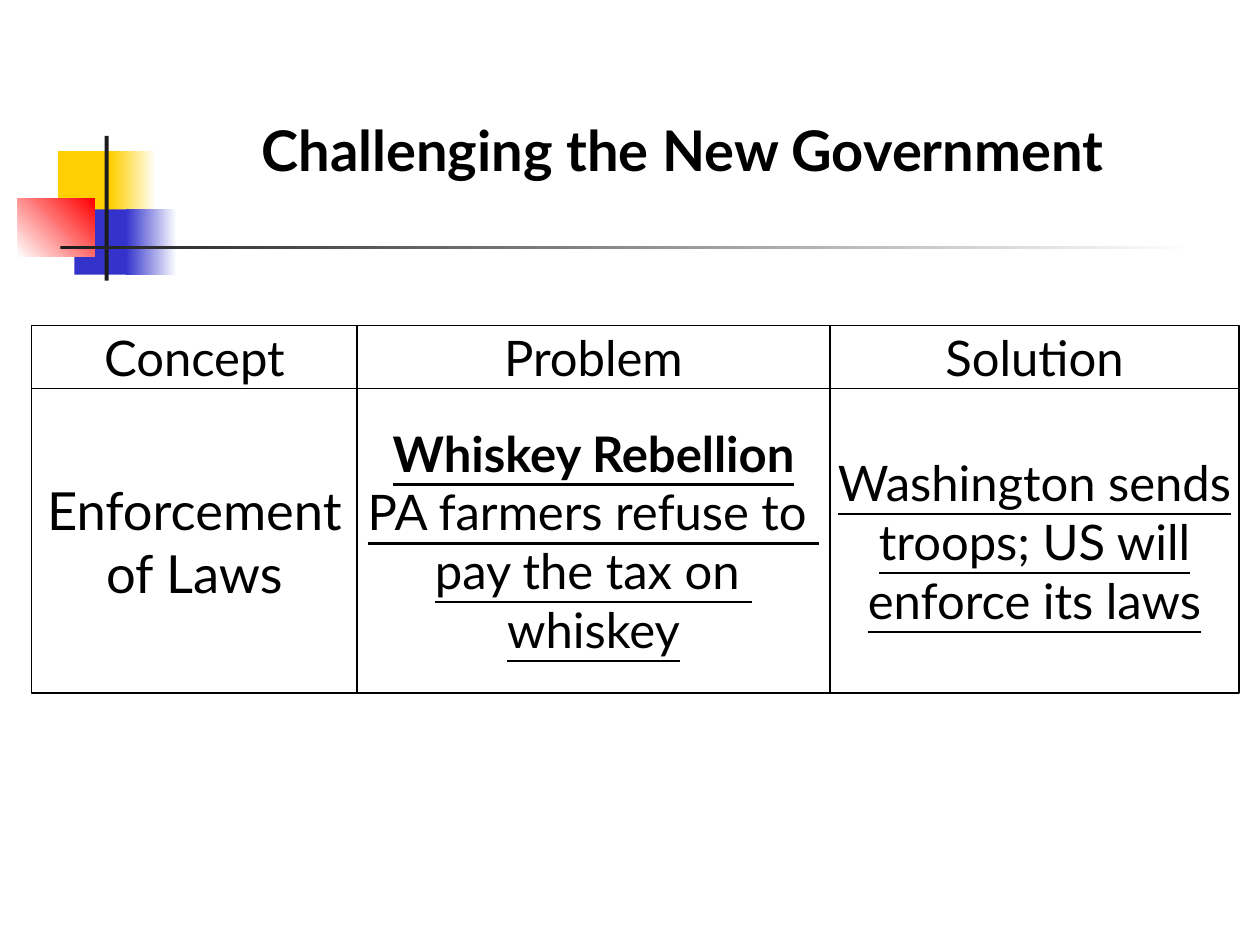
"""Build the slide on challenges to the new government."""
from typing import NamedTuple

from pptx import Presentation
from pptx.dml.color import RGBColor
from pptx.enum.shapes import MSO_SHAPE
from pptx.enum.text import MSO_ANCHOR, MSO_AUTO_SIZE, PP_ALIGN
from pptx.util import Cm, Pt

RECT = MSO_SHAPE.RECTANGLE
CENTER = PP_ALIGN.CENTER
MIDDLE, BOTTOM = MSO_ANCHOR.MIDDLE, MSO_ANCHOR.BOTTOM
NO_AUTOFIT = MSO_AUTO_SIZE.NONE
FONT = "Lato"
BLACK, WHITE, DARK = "000000", "FFFFFF", "1C1C1C"
YELLOW, BLUE, RED = "FFCF01", "3333CC", "FF0000"


class Block(NamedTuple):
    left: float
    top: float
    width: float
    height: float
    start: str
    end: str = ""
    angle: float = 0


class Para(NamedTuple):
    lines: list[str]
    size: float = 28
    bold: bool = False
    underline: bool = False


class Column(NamedTuple):
    width: float
    heading: str
    body: list[Para]


BLOCKS = [
    Block(1.17, 3.05, 1.22, 1.32, YELLOW),
    Block(2.24, 3.05, 0.91, 1.32, YELLOW, WHITE),
    Block(1.5, 4.22, 1.17, 1.32, BLUE),
    Block(2.54, 4.22, 1.02, 1.32, BLUE, WHITE),
    Block(0.36, 4.01, 1.55, 1.17, WHITE, RED, 45),
    Block(2.11, 2.74, 0.08, 2.92, DARK),
    Block(1.22, 4.95, 22.86, 0.08, DARK, WHITE),
]
COLUMNS = [
    Column(6.56, "Concept", [Para(["Enforcement"], 30), Para(["of Laws"], 30)]),
    Column(9.53, "Problem", [
        Para(["Whiskey Rebellion"], bold=True, underline=True),
        Para(["PA farmers refuse to ", "pay the tax on ", "whiskey"], underline=True),
    ]),
    Column(8.25, "Solution", [
        Para(["Washington sends", "troops; US will", "enforce its laws"], underline=True),
    ]),
]
GRID_LEFT, GRID_TOP = 0.64, 6.56
HEAD_HEIGHT, BODY_HEIGHT = 1.27, 6.14


def color(value: str) -> RGBColor:
    """Turn a hex string into a colour."""
    return RGBColor.from_string(value)


def add_rect(s, left: float, top: float, width: float, height: float):
    """Add a rectangle without shadow, measured in centimetres."""
    sp = s.shapes.add_shape(RECT, Cm(left), Cm(top), Cm(width), Cm(height))
    sp.shadow.inherit = False
    return sp


def add_block(s, block: Block) -> None:
    """Draw one plain or fading block of the ornament."""
    sp = add_rect(s, block.left, block.top, block.width, block.height)
    sp.line.fill.background()
    if not block.end:
        sp.fill.solid()
        sp.fill.fore_color.rgb = color(block.start)
        return
    sp.fill.gradient()
    sp.fill.gradient_angle = block.angle
    for stop, value in zip(sp.fill.gradient_stops, (block.start, block.end)):
        stop.color.rgb = color(value)


def write(tf, paras: list[Para]) -> None:
    """Write centred paragraphs into a text frame, one run a line."""
    for i, para in enumerate(paras):
        p = tf.add_paragraph() if i else tf.paragraphs[0]
        p.alignment = CENTER
        for j, line in enumerate(para.lines):
            if j:
                p.add_line_break()
            r = p.add_run()
            r.text = line
            r.font.name = FONT
            r.font.size = Pt(para.size)
            r.font.bold = para.bold
            r.font.underline = para.underline
            r.font.color.rgb = color(BLACK)


def add_cell(s, left: float, top: float, width: float, height: float,
             paras: list[Para]) -> None:
    """Draw one outlined cell with centred text."""
    sp = add_rect(s, left, top, width, height)
    sp.fill.solid()
    sp.fill.fore_color.rgb = color(WHITE)
    sp.line.color.rgb = color(BLACK)
    sp.line.width = Pt(0.75)
    tf = sp.text_frame
    tf.word_wrap = False
    tf.vertical_anchor = MIDDLE
    write(tf, paras)


def set_title(s, text: str) -> None:
    """Place and write the slide title."""
    sp = s.shapes.title
    sp.left, sp.top, sp.width, sp.height = Cm(2.97), Cm(1.7), Cm(21.59), Cm(2.11)
    tf = sp.text_frame
    tf.auto_size = NO_AUTOFIT
    tf.vertical_anchor = BOTTOM
    write(tf, [Para([text], 32, bold=True)])


def main() -> None:
    """Build and save the presentation."""
    prs = Presentation()
    prs.slide_width, prs.slide_height = Cm(25.4), Cm(19.05)
    s = prs.slides.add_slide(prs.slide_layouts[5])
    for block in BLOCKS:
        add_block(s, block)
    set_title(s, "Challenging the New Government")
    left = GRID_LEFT
    for col in COLUMNS:
        add_cell(s, left, GRID_TOP + HEAD_HEIGHT, col.width, BODY_HEIGHT, col.body)
        add_cell(s, left, GRID_TOP, col.width, HEAD_HEIGHT, [Para([col.heading])])
        left += col.width
    prs.save("out.pptx")


if __name__ == "__main__":
    main()
